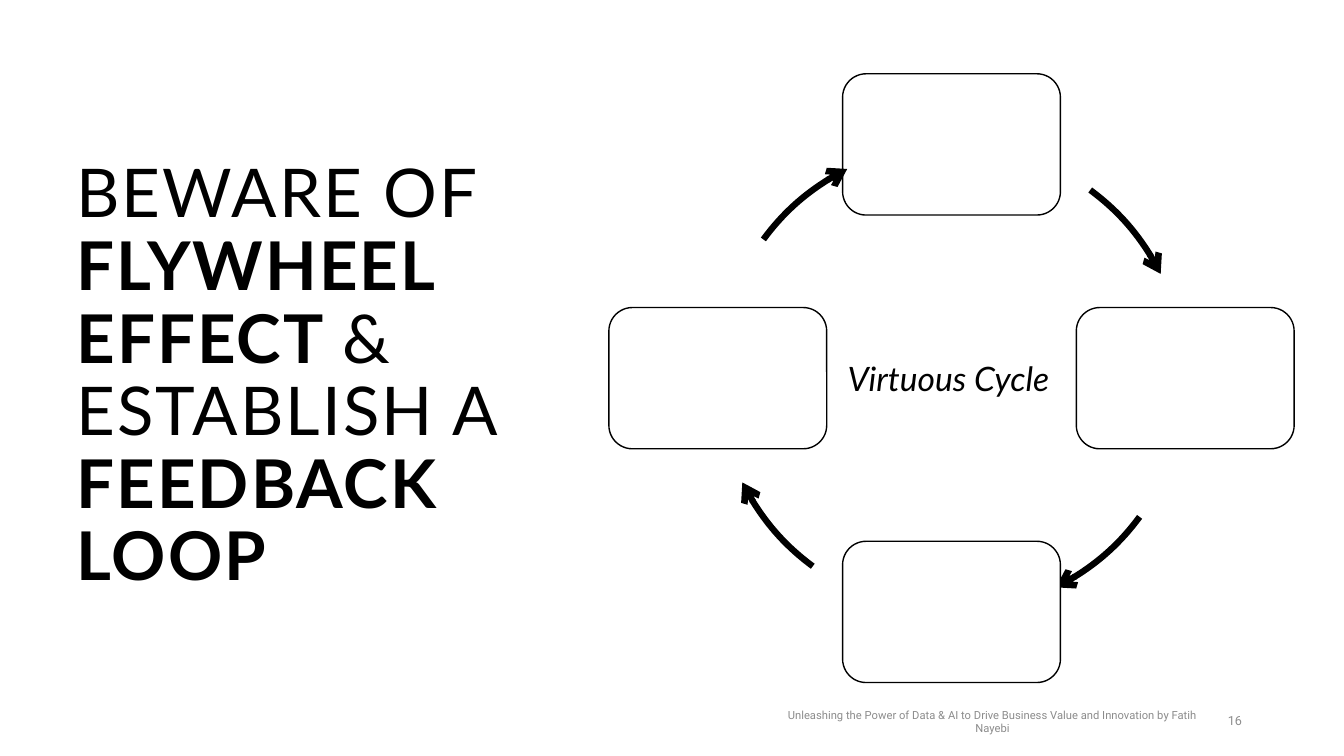
"""Build the flywheel slide: a headline beside a four-step virtuous cycle."""
import math

from lxml import etree
from pptx import Presentation
from pptx.dml.color import RGBColor
from pptx.enum.shapes import MSO_SHAPE
from pptx.enum.text import MSO_ANCHOR, MSO_AUTO_SIZE, PP_ALIGN
from pptx.oxml.ns import qn
from pptx.util import Cm, Pt

ROUNDED = MSO_SHAPE.ROUNDED_RECTANGLE
ARC = MSO_SHAPE.ARC
TOP, MIDDLE = MSO_ANCHOR.TOP, MSO_ANCHOR.MIDDLE
GROW = MSO_AUTO_SIZE.SHAPE_TO_FIT_TEXT
LEFT, CENTER, RIGHT = PP_ALIGN.LEFT, PP_ALIGN.CENTER, PP_ALIGN.RIGHT
COLORS = {"ink": "000000", "paper": "FFFFFF", "muted": "8C8C8C"}

deck = Presentation()
deck.slide_width, deck.slide_height = Cm(33.87), Cm(19.05)
page = deck.slides.add_slide(deck.slide_layouts[6])


def color(name):
    return RGBColor.from_string(COLORS[name])


def add_text(spans, place, size, font="Lato", ink="ink", align=LEFT, anchor=MIDDLE,
             italic=None, wrap=True, line_spacing=None, tracking=None):
    box = page.shapes.add_textbox(*[Cm(length) for length in place])
    frame = box.text_frame
    frame.word_wrap, frame.vertical_anchor = wrap, anchor
    if not wrap:
        frame.auto_size = GROW
    para = frame.paragraphs[0]
    para.alignment, para.line_spacing = align, line_spacing
    for text, bold in spans:
        span = para.add_run()
        span.text = text
        span.font.name, span.font.size = font, Pt(size)
        span.font.bold, span.font.italic = bold, italic
        span.font.color.rgb = color(ink)
        if tracking:
            span.font._element.set("spc", str(tracking))


add_text([("16", False)], (23.93, 17.65, 7.62, 1.02), 9,
         font="Roboto", ink="muted", align=RIGHT)

center_x, center_y, radius = 23.98, 9.53, 5.89
step_width, step_height = 5.49, 3.56
arrow_start, arrow_end = 306.4, 333.5
cycle = page.shapes.add_group_shape()

for turn in range(0, 360, 90):
    angle = math.radians(turn - 90)
    step_x = center_x + radius * math.cos(angle)
    step_y = center_y + radius * math.sin(angle)
    step = cycle.shapes.add_shape(
        ROUNDED, Cm(step_x - step_width / 2), Cm(step_y - step_height / 2),
        Cm(step_width), Cm(step_height))
    step.fill.solid()
    step.fill.fore_color.rgb = color("paper")
    step.line.width = Pt(1)

    arrow = cycle.shapes.add_shape(
        ARC, Cm(center_x - radius), Cm(center_y - radius), Cm(2 * radius), Cm(2 * radius))
    arrow.adjustments[0] = (arrow_start + turn) % 360 * 0.6
    arrow.adjustments[1] = (arrow_end + turn) % 360 * 0.6
    arrow.fill.background()
    arrow.line.width = Pt(4.5)

    for shape in (step, arrow):
        shape.shadow.inherit = False
        shape.line.color.rgb = color("ink")
    etree.SubElement(arrow.line._get_or_add_ln(), qn("a:tailEnd"), type="arrow")

add_text([("Unleashing the Power of Data & AI to Drive Business Value and Innovation "
           "by Fatih Nayebi", False)], (19.15, 17.83, 11.73, 0.69), 8,
         font="Roboto", ink="muted", align=CENTER)
add_text([("Virtuous Cycle", False)], (21.11, 8.89, 5.72, 1.27), 24,
         anchor=TOP, italic=True, wrap=False)
add_text([("BEWARE OF ", False), ("FLYWHEEL EFFECT ", True),
          ("& ESTABLISH A ", False), ("FEEDBACK LOOP", True)],
         (1.68, 2.82, 11.58, 13.39), 48, line_spacing=0.9, tracking=150)

deck.save("out.pptx")
